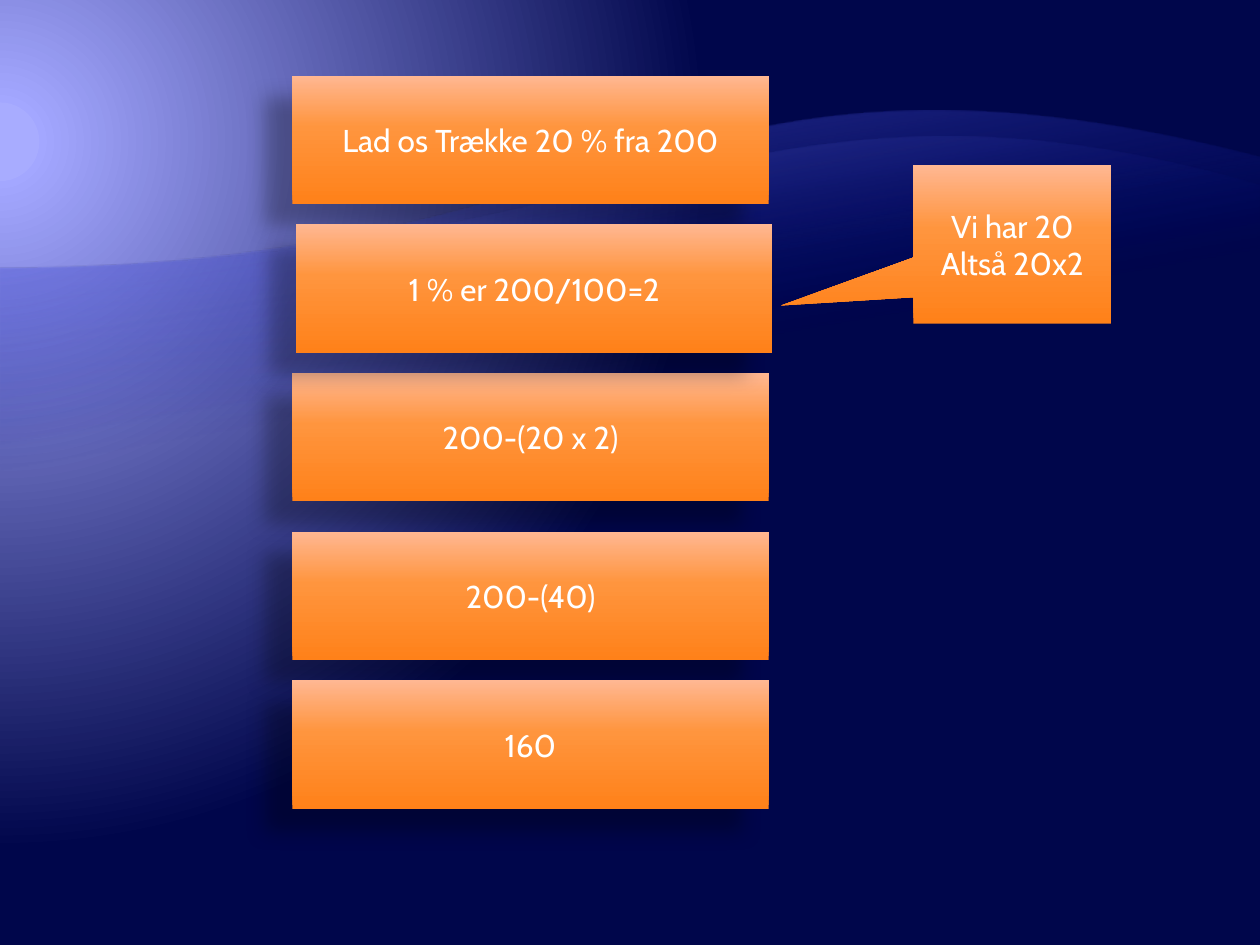
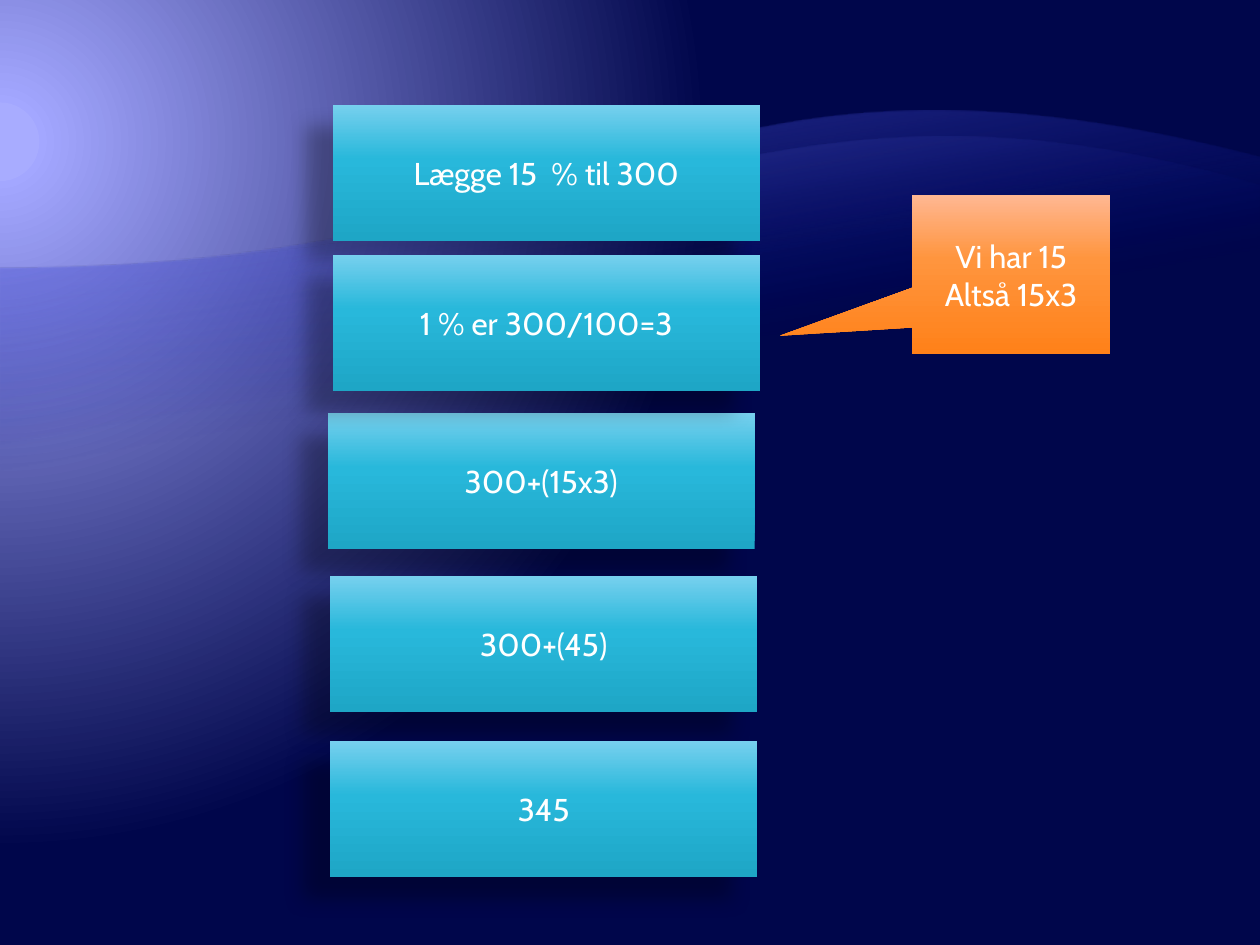
from dataclasses import dataclass

from lxml import etree
from pptx import Presentation
from pptx.dml.color import RGBColor
from pptx.enum.shapes import MSO_SHAPE
from pptx.enum.text import MSO_ANCHOR, PP_ALIGN
from pptx.oxml.ns import qn
from pptx.shapes.base import BaseShape
from pptx.slide import Slide
from pptx.util import Inches, Pt

RECTANGLE = MSO_SHAPE.RECTANGLE
CALLOUT = MSO_SHAPE.RECTANGULAR_CALLOUT
CENTER = PP_ALIGN.CENTER
MIDDLE = MSO_ANCHOR.MIDDLE
BLANK_LAYOUT = 6
CURVE_STEPS = 60


@dataclass(frozen=True)
class Stop:
    position: int
    color: str
    opacity: int = 100


@dataclass(frozen=True)
class Theme:
    font: str = "Cabin"
    size: int = 18
    text: str = "FFFFFF"
    shadow: str = "000000"
    orange: tuple[Stop, ...] = (Stop(0, "FF8119"), Stop(60, "FF953E"), Stop(100, "FFB792"))
    cyan: tuple[Stop, ...] = (Stop(0, "1EA6C6"), Stop(60, "28B8DB"), Stop(100, "77D0EE"))
    glow: tuple[Stop, ...] = (Stop(5, "A8ACFF"), Stop(5, "A3A7FF"), Stop(90, "00064B"))
    back_wave: tuple[Stop, ...] = (Stop(65, "000D9E", 0), Stop(100, "797FFF", 55))
    front_wave: tuple[Stop, ...] = (Stop(65, "000D9E", 0), Stop(100, "A3A7FF", 30))


THEME = Theme()


@dataclass(frozen=True)
class Wave:
    """A band whose upper edge is one cubic curve from left to right."""
    curve: tuple[tuple[float, float], ...]
    bottom: float
    stops: tuple[Stop, ...]


@dataclass(frozen=True)
class Step:
    text: str
    left: float
    top: float


@dataclass(frozen=True)
class Calculation:
    steps: tuple[Step, ...]
    width: float
    height: float
    stops: tuple[Stop, ...]
    hint: tuple[str, ...]
    hint_left: float
    hint_top: float


WAVES = (
    Wave(((0, 2.13), (5, 2.13), (5.34, 0.05), (10, 1.25)), 7.33, THEME.back_wave),
    Wave(((0, 2.13), (5, 2.13), (5.98, 0.31), (10, 1.47)), 6.37, THEME.front_wave),
)

# The third step lies beneath the second, so it comes first.
CALCULATIONS = (
    Calculation(
        (
            Step("Lad os Trække 20 % fra 200", 2.32, 0.6),
            Step("200-(20 x 2)", 2.32, 2.96),
            Step("1 % er 200/100=2", 2.35, 1.78),
            Step("200-(40)", 2.32, 4.22),
            Step("160", 2.32, 5.4),
        ),
        3.78, 1.02, THEME.orange, ("Vi har 20", "Altså 20x2"), 7.25, 1.31,
    ),
    Calculation(
        (
            Step("Lægge 15  % til 300", 2.64, 0.83),
            Step("300+(15x3)", 2.6, 3.28),
            Step("1 % er 300/100=3", 2.64, 2.02),
            Step("300+(45)", 2.62, 4.57),
            Step("345", 2.62, 5.88),
        ),
        3.39, 1.08, THEME.cyan, ("Vi har 15", "Altså 15x3"), 7.24, 1.55,
    ),
)


def add_node(parent: etree._Element, tag: str, **attributes: object) -> etree._Element:
    values = {name: str(value) for name, value in attributes.items()}
    return etree.SubElement(parent, qn(tag), values)


def add_color(parent: etree._Element, color: str, opacity: int) -> None:
    node = add_node(parent, "a:srgbClr", val=color)
    if opacity < 100:
        add_node(node, "a:alpha", val=opacity * 1000)


def reset_gradient(owner: etree._Element, stops: tuple[Stop, ...]) -> etree._Element:
    """Give the owner's gradient fill new stops and no direction yet."""
    gradient = owner.find(".//" + qn("a:gradFill"))
    for child in list(gradient):
        gradient.remove(child)
    stop_list = add_node(gradient, "a:gsLst")
    for stop in stops:
        node = add_node(stop_list, "a:gs", pos=stop.position * 1000)
        add_color(node, stop.color, stop.opacity)
    return gradient


def paint(shape: BaseShape, stops: tuple[Stop, ...], angle: int) -> None:
    shape.shadow.inherit = False
    shape.line.fill.background()
    shape.fill.gradient()
    gradient = reset_gradient(shape._element, stops)
    add_node(gradient, "a:lin", ang=angle * 60000, scaled=0)


def cast_shadow(shape: BaseShape) -> None:
    effects = shape._element.spPr.find(qn("a:effectLst"))
    shadow = add_node(effects, "a:outerShdw", blurRad=Pt(11.8), dist=Pt(19.7),
                      dir=141 * 60000, algn="ctr", rotWithShape=0)
    add_color(shadow, THEME.shadow, 28)


def write(shape: BaseShape, lines: tuple[str, ...]) -> None:
    frame = shape.text_frame
    frame.word_wrap = True
    frame.vertical_anchor = MIDDLE
    for index, line in enumerate(lines):
        para = frame.add_paragraph() if index else frame.paragraphs[0]
        para.alignment = CENTER
        span = para.add_run()
        span.text = line
        span.font.name = THEME.font
        span.font.size = Pt(THEME.size)
        span.font.color.rgb = RGBColor.from_string(THEME.text)


def curve_point(curve: tuple[tuple[float, float], ...], t: float) -> tuple[int, int]:
    weights = ((1 - t) ** 3, 3 * t * (1 - t) ** 2, 3 * t ** 2 * (1 - t), t ** 3)
    x, y = (sum(w * point[axis] for w, point in zip(weights, curve)) for axis in (0, 1))
    return Inches(x), Inches(y)


def add_wave(page: Slide, wave: Wave) -> None:
    edge = [curve_point(wave.curve, i / CURVE_STEPS) for i in range(CURVE_STEPS + 1)]
    left, right = edge[0][0], edge[-1][0]
    bottom = Inches(wave.bottom)
    builder = page.shapes.build_freeform(right, bottom)
    builder.add_line_segments([(left, bottom), *edge], close=True)
    paint(builder.convert_to_shape(), wave.stops, 260)


def add_background(page: Slide) -> None:
    page.background.fill.gradient()
    gradient = reset_gradient(page._element, THEME.glow)
    circle = add_node(gradient, "a:path", path="circle")
    add_node(circle, "a:fillToRect", l=20000, t=30000, r=135000, b=100000)
    for wave in WAVES:
        add_wave(page, wave)


def add_calculation(page: Slide, calculation: Calculation) -> None:
    for step in calculation.steps:
        box = page.shapes.add_shape(
            RECTANGLE, Inches(step.left), Inches(step.top),
            Inches(calculation.width), Inches(calculation.height))
        paint(box, calculation.stops, 270)
        cast_shadow(box)
        write(box, (step.text,))

    hint = page.shapes.add_shape(
        CALLOUT, Inches(calculation.hint_left), Inches(calculation.hint_top),
        Inches(1.57), Inches(1.26))
    hint.adjustments[0] = -1.17
    hint.adjustments[1] = 0.385
    paint(hint, THEME.orange, 270)
    write(hint, calculation.hint)


def main() -> None:
    deck = Presentation()
    deck.slide_width, deck.slide_height = Inches(10), Inches(7.5)
    for calculation in CALCULATIONS:
        page = deck.slides.add_slide(deck.slide_layouts[BLANK_LAYOUT])
        add_background(page)
        add_calculation(page, calculation)
    deck.save("out.pptx")


if __name__ == "__main__":
    main()
